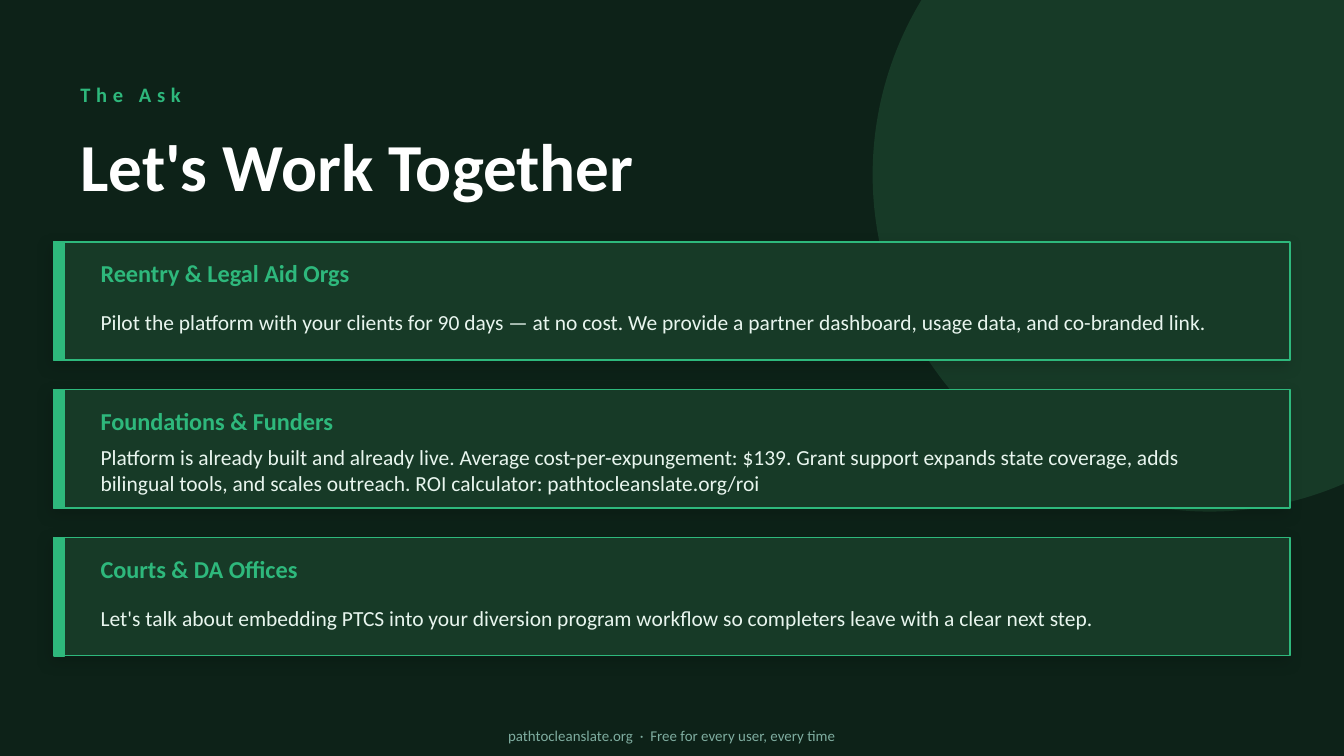
from lxml import etree
from pptx import Presentation
from pptx.dml.color import RGBColor
from pptx.enum.shapes import MSO_SHAPE
from pptx.enum.text import MSO_ANCHOR, PP_ALIGN
from pptx.oxml.ns import qn
from pptx.util import Pt

RECTANGLE, OVAL = MSO_SHAPE.RECTANGLE, MSO_SHAPE.OVAL
MIDDLE = MSO_ANCHOR.MIDDLE
LEFT, CENTER = PP_ALIGN.LEFT, PP_ALIGN.CENTER

FONT = "Calibri"
BACKGROUND, PANEL, ACCENT = "0D2218", "173A27", "2EB87C"
WHITE, BODY, MUTED = "FFFFFF", "E8F5EE", "7FADA0"

SLIDE_WIDTH, SLIDE_HEIGHT = 720, 405
CARD_LEFT, CARD_TOP, CARD_WIDTH, CARD_HEIGHT = 28.8, 129.6, 662.4, 63.36
CARD_PITCH = 79.2
BAR_WIDTH = 5.76
TEXT_LEFT, TEXT_WIDTH = 46.8, 626.4

KICKER = "The Ask"
TITLE = "Let's Work Together"
FOOTER = "pathtocleanslate.org  ·  Free for every user, every time"
CARDS = [
    ("Reentry & Legal Aid Orgs",
     "Pilot the platform with your clients for 90 days — at no cost. "
     "We provide a partner dashboard, usage data, and co-branded link."),
    ("Foundations & Funders",
     "Platform is already built and already live. Average cost-per-expungement: $139. "
     "Grant support expands state coverage, adds bilingual tools, and scales outreach. "
     "ROI calculator: pathtocleanslate.org/roi"),
    ("Courts & DA Offices",
     "Let's talk about embedding PTCS into your diversion program workflow "
     "so completers leave with a clear next step."),
]


def color(value):
    return RGBColor.from_string(value)


def add_block(slide, kind, left, top, width, height, fill, line, line_width=1):
    shape = slide.shapes.add_shape(kind, Pt(left), Pt(top), Pt(width), Pt(height))
    shape.shadow.inherit = False
    shape.fill.solid()
    shape.fill.fore_color.rgb = color(fill)
    shape.line.color.rgb = color(line)
    shape.line.width = Pt(line_width)
    return shape


def add_shadow(shape):
    effects = shape._element.spPr.find(qn("a:effectLst"))
    shadow = etree.SubElement(effects, qn("a:outerShdw"), blurRad=str(Pt(8)),
                              dist=str(Pt(3)), dir=str(135 * 60000),
                              algn="bl", rotWithShape="0")
    tint = etree.SubElement(shadow, qn("a:srgbClr"), val="000000")
    etree.SubElement(tint, qn("a:alpha"), val="14000")


def add_text(slide, text, left, top, width, height, size, fill,
             bold=False, align=LEFT, spacing=0):
    box = slide.shapes.add_textbox(Pt(left), Pt(top), Pt(width), Pt(height))
    frame = box.text_frame
    frame.word_wrap = True
    frame.vertical_anchor = MIDDLE
    paragraph = frame.paragraphs[0]
    paragraph.alignment = align
    run = paragraph.add_run()
    run.text = text
    run.font.name = FONT
    run.font.size = Pt(size)
    run.font.bold = bold
    run.font.color.rgb = color(fill)
    if spacing:
        run._r.get_or_add_rPr().set("spc", str(spacing * 100))


def add_card(slide, top, heading, body):
    card = add_block(slide, RECTANGLE, CARD_LEFT, top, CARD_WIDTH, CARD_HEIGHT,
                     PANEL, ACCENT, 0.75)
    add_shadow(card)
    add_block(slide, RECTANGLE, CARD_LEFT, top, BAR_WIDTH, CARD_HEIGHT, ACCENT, ACCENT)
    add_text(slide, heading, TEXT_LEFT, top + 5.76, TEXT_WIDTH, 21.6, 13, ACCENT, bold=True)
    add_text(slide, body, TEXT_LEFT, top + 26.64, TEXT_WIDTH, 32.4, 11.5, BODY)


def main():
    presentation = Presentation()
    presentation.slide_width = Pt(SLIDE_WIDTH)
    presentation.slide_height = Pt(SLIDE_HEIGHT)
    slide = presentation.slides.add_slide(presentation.slide_layouts[6])
    slide.background.fill.solid()
    slide.background.fill.fore_color.rgb = color(BACKGROUND)

    add_block(slide, OVAL, 468, -86.4, 360, 360, PANEL, PANEL)
    add_text(slide, KICKER, 36, 36, 468, 28.8, 11, ACCENT, bold=True, spacing=3)
    add_text(slide, TITLE, 36, 61.2, 468, 54, 36, WHITE, bold=True)
    for index, (heading, body) in enumerate(CARDS):
        add_card(slide, CARD_TOP + index * CARD_PITCH, heading, body)
    add_text(slide, FOOTER, 0, 385.2, SLIDE_WIDTH, 18, 8, MUTED, align=CENTER)

    presentation.save("out.pptx")


if __name__ == "__main__":
    main()
